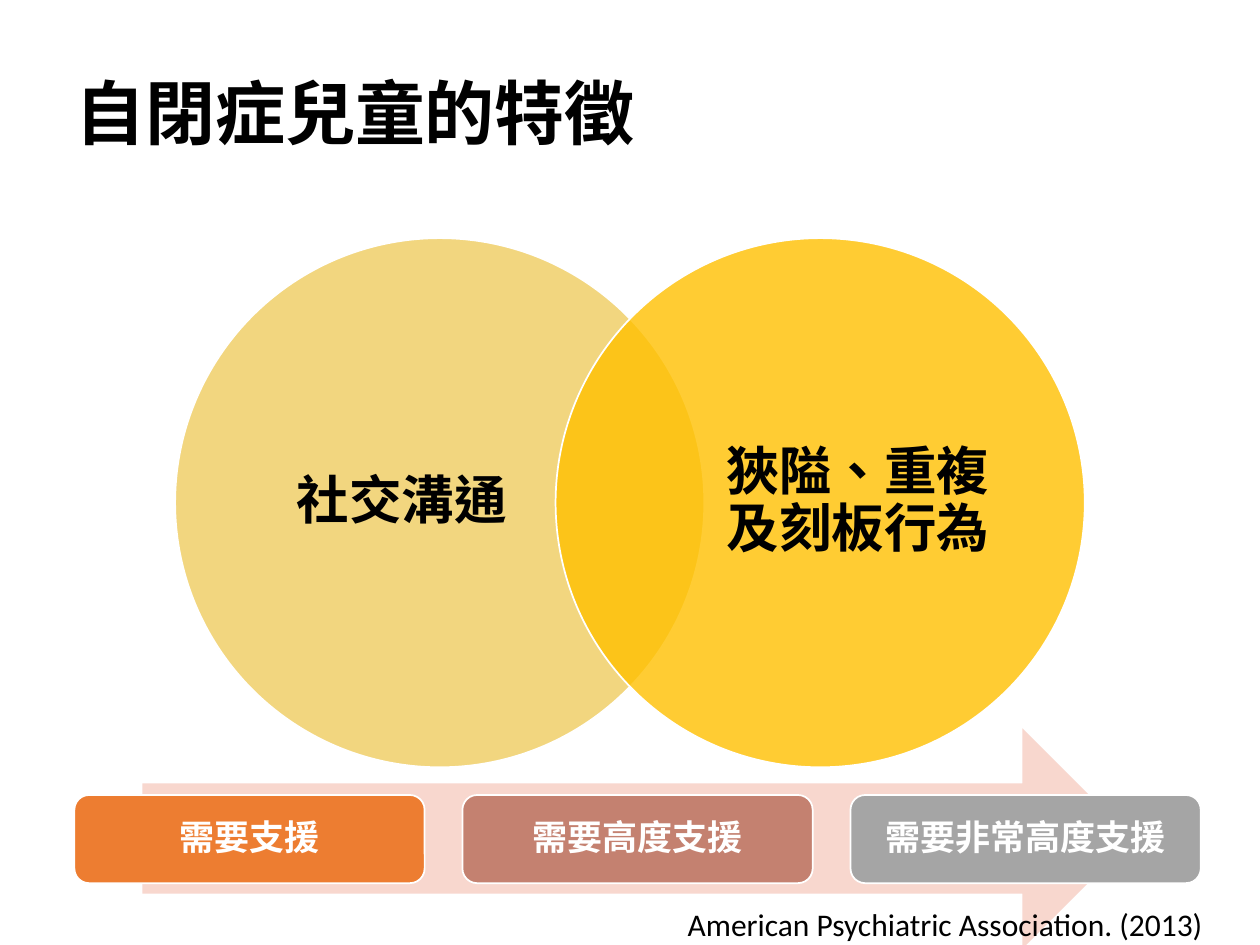
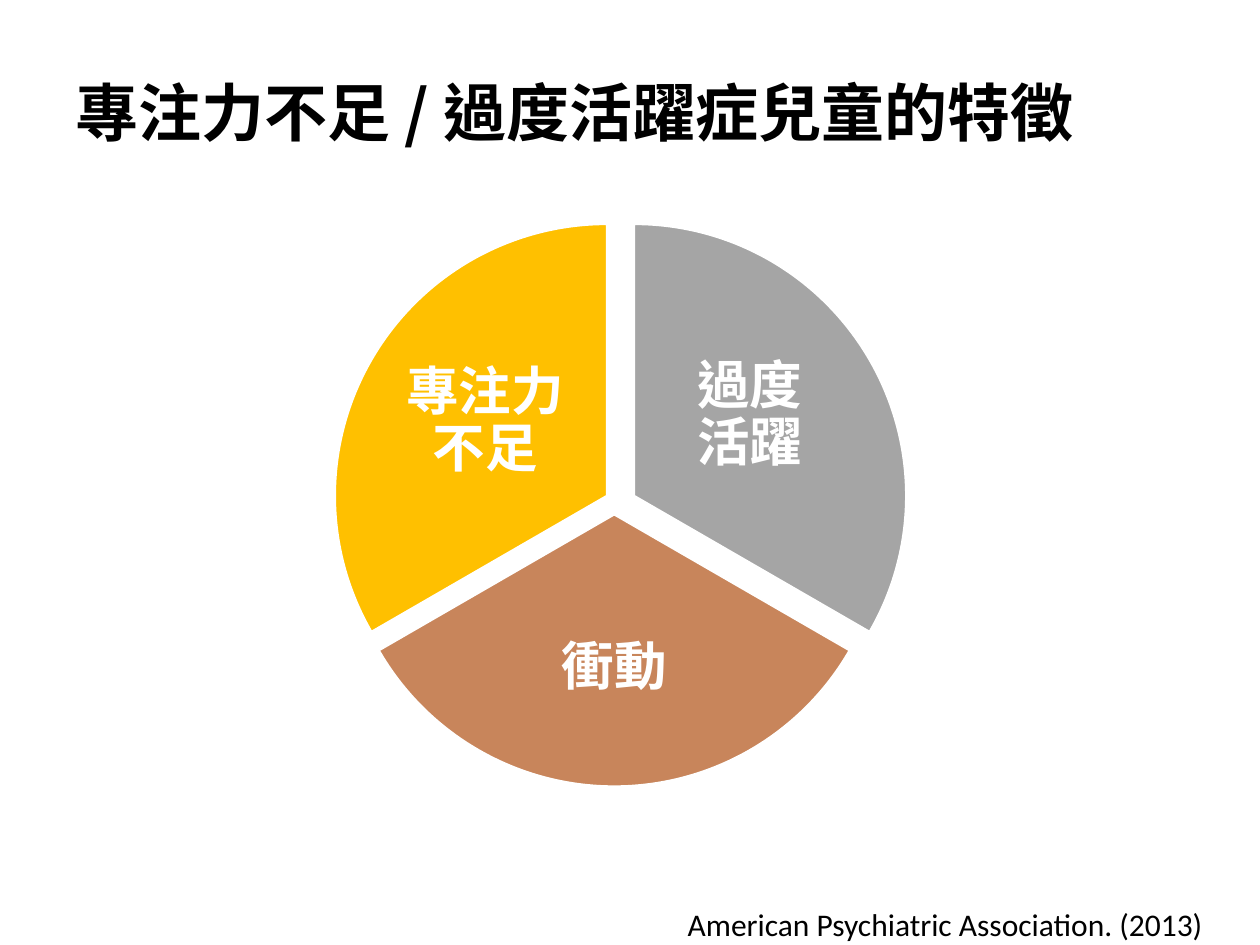
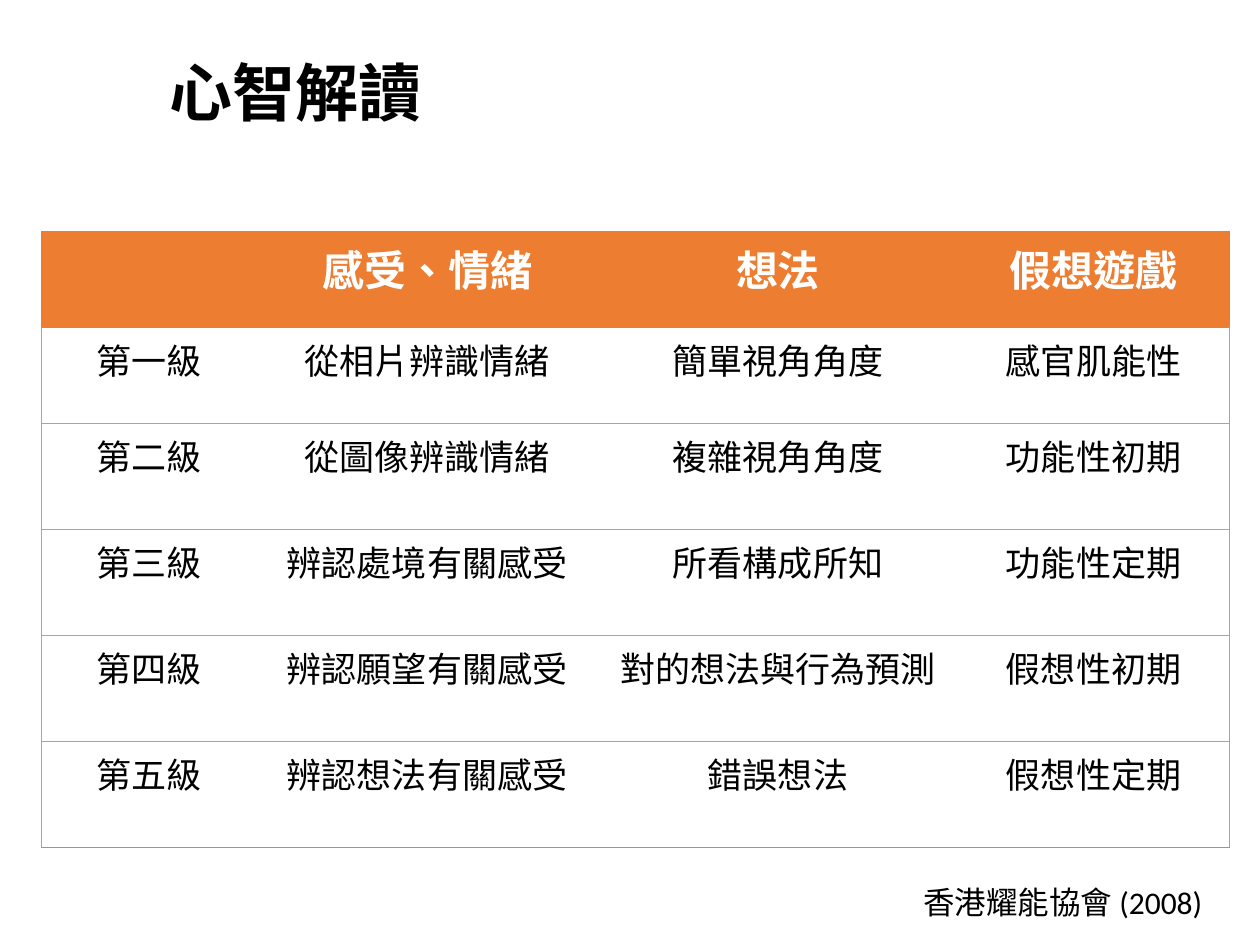
from lxml import etree
from pptx import Presentation
from pptx.dml.color import RGBColor
from pptx.enum import shapes, text
from pptx.oxml import ns
from pptx import util as u

COLS, ROWS = 100, 75
CELL = u.Inches(0.1)
BLACK = RGBColor(0x00, 0x00, 0x00)
WHITE = RGBColor(0xFF, 0xFF, 0xFF)
GREY = RGBColor(0xA5, 0xA5, 0xA5)
ORANGE = RGBColor(0xED, 0x7D, 0x31)
GOLD = RGBColor(0xFF, 0xC0, 0x00)
OCHRE = RGBColor(0xE7, 0xAE, 0x00)
ROSE = RGBColor(0xC4, 0x81, 0x70)
CLAY = RGBColor(0xC8, 0x85, 0x5B)
BLUSH = RGBColor(0xF8, 0xD7, 0xCE)
CJK, LATIN = "Noto Sans CJK SC", "Calibri"
KIND = shapes.MSO_SHAPE
MID = text.PP_ALIGN.CENTER
CITE = "American Psychiatric Association. (2013)"
LEVELS = [
    ["", "感受、情緒", "想法", "假想遊戲"],
    ["第一級", "從相片辨識情緒", "簡單視角角度", "感官肌能性"],
    ["第二級", "從圖像辨識情緒", "複雜視角角度", "功能性初期"],
    ["第三級", "辨認處境有關感受", "所看構成所知", "功能性定期"],
    ["第四級", "辨認願望有關感受", "對的想法與行為預測", "假想性初期"],
    ["第五級", "辨認想法有關感受", "錯誤想法", "假想性定期"],
]


def grid(*nums):
    """Turn columns and rows into lengths."""
    return [round(n * CELL) for n in nums]


def sub(node, tag, **attrs):
    """Add a drawing element to a node."""
    return etree.SubElement(node, ns.qn(tag), attrs)


def write(frame, words, size, color, bold=True, align=None, lead=0.9, face=CJK):
    """Write lines of text, one paragraph each."""
    for n, line in enumerate(words.split("\n")):
        para = frame.paragraphs[0] if n == 0 else frame.add_paragraph()
        para.alignment, para.line_spacing = align, lead
        run = para.add_run()
        run.text = line
        look = {"size": u.Pt(size), "bold": bold, "name": face}
        for key, value in look.items():
            setattr(run.font, key, value)
        run.font.color.rgb = color
        props = run.font._element
        props.set("lang", "zh-TW")
        sub(props, "a:ea", typeface=CJK)


def label(slide, at, words, size, color, inset=None, **look):
    """Add a wrapped text box on the grid."""
    frame = slide.shapes.add_textbox(*grid(*at)).text_frame
    frame.word_wrap = True
    frame.vertical_anchor = text.MSO_ANCHOR.MIDDLE
    if inset is not None:
        for side in ("left", "top", "right", "bottom"):
            setattr(frame, "margin_" + side, u.Inches(inset))
    write(frame, words, size, color, **look)


def title(slide, words, size=36, at=(5, 3, 90, 12.5)):
    """Add the slide title."""
    label(slide, at, words, size, BLACK)


def source(slide, words, at=(53.6, 71.3, 46.4, 4)):
    """Add the source line at the foot."""
    frame = slide.shapes.add_textbox(*grid(*at)).text_frame
    frame.word_wrap = False
    frame.auto_size = text.MSO_AUTO_SIZE.SHAPE_TO_FIT_TEXT
    write(frame, words, 18, BLACK, bold=False, lead=1, face=LATIN)


def form(slide, kind, at, fill, edge=True, alpha=None):
    """Add a filled shape with a white edge."""
    shape = slide.shapes.add_shape(kind, *grid(*at))
    shape.shadow.inherit = False
    shape.fill.solid()
    shape.fill.fore_color.rgb = fill
    if edge:
        shape.line.color.rgb, shape.line.width = WHITE, u.Pt(1)
    else:
        shape.line.fill.background()
    if alpha:
        tint = shape._element.spPr.find(".//" + ns.qn("a:srgbClr"))
        sub(tint, "a:alpha", val=str(alpha * 1000))
    return shape


def ring(slide, left, fill, alpha, start, words):
    """Add one circle of the overlap and its words."""
    form(slide, KIND.OVAL, (left, 18.9, 42, 42), fill, alpha=alpha)
    label(slide, (start, 23.8, 24.2, 32.1), words, 30, BLACK, 0, align=MID)


def wedge(slide, spot, turn, fill, at, words):
    """Add one third of the pie and its words."""
    pie = form(slide, KIND.PIE, (*spot, 43.1, 43.1), fill)
    pie.adjustments[0], pie.adjustments[1] = turn
    label(slide, at, words, 30, WHITE, 0.04, align=MID)


def steps(slide, items):
    """Add the row of support levels over an arrow."""
    form(slide, KIND.RIGHT_ARROW, (11.3, 57.8, 78.6, 17.5), BLUSH, edge=False)
    for n, (words, fill) in enumerate(items):
        step = form(slide, KIND.ROUNDED_RECTANGLE, (5.9 + 30.8 * n, 63.1, 27.8, 7), fill)
        write(step.text_frame, words, 20, WHITE, align=MID)


def border(cell, sides):
    """Draw the given sides of a cell and clear the rest."""
    props = cell._tc.get_or_add_tcPr()
    for side in "LRTB":
        line = sub(props, "a:ln" + side, w=str(u.Pt(0.5)))
        if side in sides:
            sub(sub(line, "a:solidFill"), "a:srgbClr", val=str(sides[side]))
        else:
            sub(line, "a:noFill")


def table(slide, rows, at, wide, high):
    """Add a table with a filled head and ruled rows."""
    area = grid(*at, sum(wide), sum(high))
    grille = slide.shapes.add_table(len(rows), len(wide), *area).table
    grille.horz_banding = False
    for col, width in zip(grille.columns, grid(*wide)):
        col.width = width
    for row, height in zip(grille.rows, grid(*high)):
        row.height = height
    last = len(rows) - 1
    for r, row in enumerate(rows):
        head = r == 0
        for c, words in enumerate(row):
            cell = grille.cell(r, c)
            rule = ORANGE if head else GREY
            sides = {"T": ORANGE if r < 2 else GREY, "B": ORANGE if r in (0, last) else GREY}
            if c == 0:
                sides["L"] = rule
            if c == len(wide) - 1:
                sides["R"] = rule
            border(cell, sides)
            cell.fill.solid()
            cell.fill.fore_color.rgb = ORANGE if head else WHITE
            if words:
                write(cell.text_frame, words, 24 if head else 20, WHITE if head else BLACK,
                      bold=head, align=MID, lead=1, face=LATIN)


def main():
    """Build the three slides."""
    deck = Presentation()
    deck.slide_width, deck.slide_height = grid(COLS, ROWS)
    autism, focus, mind = [deck.slides.add_slide(deck.slide_layouts[6]) for _ in range(3)]

    title(autism, "自閉症兒童的特徵", 40)
    ring(autism, 13.9, OCHRE, 50, 19.8, "社交溝通")
    ring(autism, 44.1, GOLD, 80, 56, "狹隘、重複及刻板行為")
    steps(autism, [("需要支援", ORANGE), ("需要高度支援", ROSE), ("需要非常高度支援", GREY)])
    source(autism, CITE)

    title(focus, "專注力不足 / 過度活躍症兒童的特徵")
    source(focus, CITE)
    wedge(focus, (28.8, 17.8), (162, 18), GREY, (52.2, 25.8, 14.6, 14.4), "過度\n活躍")
    wedge(focus, (27.2, 19.3), (18, 90), CLAY, (39, 46.4, 19.5, 13.3), "衝動")
    wedge(focus, (26.6, 17.8), (90, 162), GOLD, (31.2, 26.3, 14.6, 14.4), "專注力不足")

    title(mind, "心智解讀", at=(12.5, 0.9, 87.5, 13.5))
    table(mind, LEVELS, (3.3, 18.4), (17, 27.2, 28.5, 21.6), [7.6] * 2 + [8.42] * 4)
    source(mind, "香港耀能協會 (2008)", (72.3, 69.6, 25.3, 4))
    deck.save("out.pptx")


if __name__ == "__main__":
    main()
